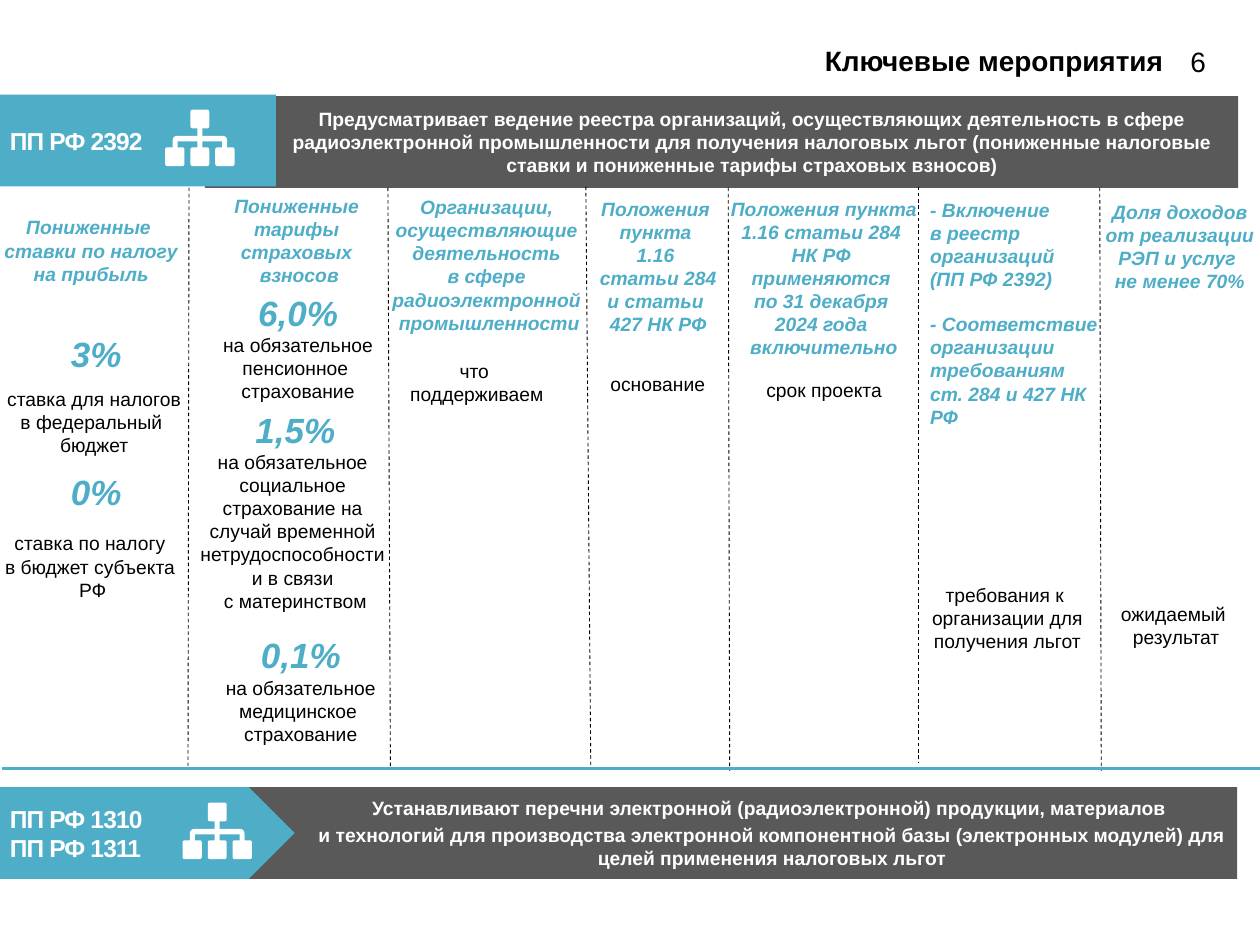
from dataclasses import dataclass
from typing import Any

from lxml import etree
from pptx import Presentation
from pptx import util as u
from pptx.dml import color
from pptx.enum import dml, shapes, text
from pptx.oxml import ns

LEFT, CENTER, RIGHT = text.PP_ALIGN.LEFT, text.PP_ALIGN.CENTER, text.PP_ALIGN.RIGHT


@dataclass(frozen=True)
class Theme:
    font: str = "Arial"
    accent: str = "4EADC7"
    grey: str = "595959"
    black: str = "000000"
    white: str = "FFFFFF"
    body: float = 11
    tag: float = 14
    heading: float = 16
    rate: float = 20


THEME = Theme()


@dataclass(frozen=True)
class Style:
    size: float
    color: str
    bold: bool = False
    italic: bool = False
    tracking: int = 0  # hundredths of a point


PLAIN = Style(THEME.body, THEME.black)
TOPIC = Style(THEME.body, THEME.accent, True, True)
RATE = Style(THEME.rate, THEME.accent, True, True)
BANNER = Style(THEME.body, THEME.white, True)
TAG = Style(THEME.tag, THEME.white, True, tracking=-50)
HEADING = Style(THEME.heading, THEME.black, True)
NUMBER = Style(THEME.heading, THEME.black)


@dataclass(frozen=True)
class Block:
    """A text box in centimetres; a line break in the words starts a new paragraph."""
    left: float
    top: float
    width: float
    height: float
    words: str
    style: Style = PLAIN
    align: Any = CENTER
    rate: str = ""
    gaps: tuple = ()  # (paragraph index, space before in points)
    insets: tuple = (0.13, 0.13)
    wrap: bool = True


@dataclass(frozen=True)
class Rule:
    x1: float
    y1: float
    x2: float
    y2: float


BLOCKS = [
    # Page header
    Block(11, 0.74, 12.7, 0.94, "Ключевые мероприятия", HEADING, RIGHT, insets=(0.25, 0.13)),
    Block(24, 0.89, 0.3, 0.69, "6", NUMBER, RIGHT, insets=(0, 0), wrap=False),
    # Profit tax
    Block(-0.08, 4.22, 3.84, 1.68, "Пониженные \nставки по налогу на прибыль", TOPIC),
    Block(1.3, 6.58, 1.3, 1.12, "3%", RATE, LEFT),
    Block(-0.13, 7.67, 4.06, 1.68, "ставка для налогов\nв федеральный \nбюджет"),
    Block(1.3, 9.35, 1.3, 1.12, "0%", RATE, LEFT),
    Block(-0.25, 10.59, 4.24, 1.68, "ставка по налогу \nв бюджет субъекта \nРФ"),
    # Insurance contributions
    Block(3.81, 3.78, 4.45, 2.13, "Пониженные \nтарифы \nстраховых \nвзносов", TOPIC),
    Block(4.32, 5.74, 3.38, 2.51, "на обязательное пенсионное \nстрахование", rate="6,0%"),
    Block(3.68, 8.1, 4.55, 4.39,
          "на обязательное \nсоциальное \nстрахование на \nслучай временной \n"
          "нетрудоспособности \nи в связи \nс материнством", rate="1,5%"),
    Block(4.34, 12.65, 3.45, 2.51, "на обязательное медицинское \nстрахование", rate="0,1%"),
    # Who is supported
    Block(7.77, 3.81, 4.19, 3.07,
          "Организации, \nосуществляющие \nдеятельность \nв сфере \n"
          "радиоэлектронной \nпромышленности", TOPIC),
    Block(7.34, 7.11, 4.55, 1.19, "что \nподдерживаем"),
    # Legal basis
    Block(11.91, 3.84, 2.72, 3.07,
          "Положения \nпункта \n1.16 \nстатьи 284 \nи статьи \n427 НК РФ", TOPIC),
    Block(11.48, 7.37, 3.56, 0.74, "основание"),
    # Term
    Block(14.5, 3.84, 4.22, 3.56,
          "Положения пункта 1.16 статьи 284 \nНК РФ \nприменяются \n"
          "по 31 декабря \n2024 года \nвключительно", TOPIC),
    Block(14.94, 7.49, 3.35, 0.74, "срок проекта"),
    # Requirements
    Block(18.62, 3.86, 3.68, 4.95,
          "- Включение\nв реестр\nорганизаций\n(ПП РФ 2392)\n"
          "- Соответствие организации\nтребованиям\nст. 284 и 427 НК РФ",
          TOPIC, LEFT, gaps=((4, 12.65),)),
    Block(18.57, 11.63, 3.48, 1.68, "требования к \nорганизации для получения льгот"),
    # Expected result
    Block(22.12, 3.91, 3.33, 2.13, "Доля доходов от реализации РЭП и услуг \nне менее 70%", TOPIC),
    Block(22.07, 12.01, 3.28, 1.19, "ожидаемый \nрезультат"),
]

DIVIDERS = [
    Rule(3.81, 3.78, 3.79, 15.49), Rule(7.82, 3.78, 7.87, 15.49),
    Rule(11.81, 3.76, 11.91, 15.52), Rule(14.68, 3.78, 14.71, 15.54),
    Rule(18.52, 3.76, 18.52, 15.39), Rule(22.17, 3.78, 22.2, 15.54),
]

BAR_HEIGHT = 1.85
# Right half of the hierarchy icon: x from its axis, y, corner radius
ICON_HALF = [
    (0.19, 0, 0.05), (0.19, 0.38, 0.05), (0.05, 0.38, 0), (0.05, 0.53, 0),
    (0.55, 0.53, 0.1), (0.55, 0.76, 0), (0.7, 0.76, 0.05), (0.7, 1.14, 0.05),
    (0.31, 1.14, 0.05), (0.31, 0.76, 0.05), (0.45, 0.76, 0), (0.45, 0.64, 0),
    (0.05, 0.64, 0), (0.05, 0.76, 0), (0.19, 0.76, 0.05), (0.19, 1.14, 0.05),
]


def rgb(value: str) -> color.RGBColor:
    return color.RGBColor.from_string(value)


def write(frame, lines: list, align, gaps: tuple = ()) -> None:
    """Fill a text frame with (words, style) paragraphs."""
    for index, (words, style) in enumerate(lines):
        para = frame.paragraphs[0] if index == 0 else frame.add_paragraph()
        para.alignment = align
        if index in dict(gaps):
            para.space_before = u.Pt(dict(gaps)[index])
        span = para.add_run()
        span.text = words
        formats = {"name": THEME.font, "size": u.Pt(style.size),
                   "bold": style.bold, "italic": style.italic}
        for name, value in formats.items():
            setattr(span.font, name, value)
        span.font.color.rgb = rgb(style.color)
        if style.tracking:
            span.font._element.set("spc", str(style.tracking))


def set_frame(frame, across: float, down: float, **formats) -> None:
    insets = {"margin_left": u.Cm(across), "margin_right": u.Cm(across),
              "margin_top": u.Cm(down), "margin_bottom": u.Cm(down)}
    for name, value in (insets | formats).items():
        setattr(frame, name, value)


def paint(shape, fill: str) -> None:
    shape.fill.solid()
    shape.fill.fore_color.rgb = rgb(fill)
    shape.line.fill.background()


def add_block(page, block: Block) -> None:
    box = page.shapes.add_textbox(*map(u.Cm, (block.left, block.top, block.width, block.height)))
    set_frame(box.text_frame, *block.insets, word_wrap=block.wrap,
              auto_size=text.MSO_AUTO_SIZE.SHAPE_TO_FIT_TEXT)
    lines = [(block.rate, RATE)] if block.rate else []
    lines += [(words, block.style) for words in block.words.split("\n")]
    write(box.text_frame, lines, block.align, block.gaps)


def add_bar(page, kind, left: float, top: float, width: float, fill: str, words: str,
            style: Style, align, indent: float = 0, gaps: tuple = ()) -> None:
    bar = page.shapes.add_shape(kind, *map(u.Cm, (left, top, width, BAR_HEIGHT)))
    bar.shadow.inherit = False
    paint(bar, fill)
    set_frame(bar.text_frame, 0.2, 0.2, margin_left=u.Cm(0.2 + indent), word_wrap=True,
              vertical_anchor=text.MSO_ANCHOR.MIDDLE)
    write(bar.text_frame, [(line, style) for line in words.split("\n")], align, gaps)


def add_rule(page, rule: Rule, stroke: str, width: float, dash=None) -> None:
    line = page.shapes.add_connector(shapes.MSO_CONNECTOR.STRAIGHT,
                                     *map(u.Cm, (rule.x1, rule.y1, rule.x2, rule.y2)))
    line.line.color.rgb = rgb(stroke)
    line.line.width = u.Pt(width)
    if dash:
        line.line.dash_style = dash
    etree.SubElement(line._element.spPr, ns.qn("a:effectLst"))


def add_icon(page, axis: float, top: float) -> None:
    corners = ICON_HALF + [(-x, y, r) for x, y, r in reversed(ICON_HALF)]
    points = []
    for index, (x, y, radius) in enumerate(corners):
        ends = []
        for other in (corners[index - 1], corners[(index + 1) % len(corners)]):
            dx, dy = other[0] - x, other[1] - y
            reach = radius / (abs(dx) + abs(dy))  # all sides are upright or level
            ends.append((x + dx * reach, y + dy * reach))
        (ax, ay), (bx, by) = ends
        for t in (0, 0.25, 0.5, 0.75, 1) if radius else (0,):
            a, m, b = (1 - t) ** 2, 2 * t * (1 - t), t * t
            points.append((u.Cm(axis + a * ax + m * x + b * bx),
                           u.Cm(top + a * ay + m * y + b * by)))
    builder = page.shapes.build_freeform(*points[0])
    builder.add_line_segments(points[1:], close=True)
    icon = builder.convert_to_shape()
    icon.shadow.inherit = False
    paint(icon, THEME.white)


def place_title(page) -> None:
    title = page.shapes.title
    title.left, title.top, title.width, title.height = map(u.Cm, (0, 1.91, 5.56, BAR_HEIGHT))
    paint(title, THEME.accent)
    set_frame(title.text_frame, 0.2, 0.2, word_wrap=True, auto_size=text.MSO_AUTO_SIZE.NONE,
              vertical_anchor=text.MSO_ANCHOR.MIDDLE)
    write(title.text_frame, [("ПП РФ 2392", TAG)], LEFT)
    page.shapes._spTree.append(title._element)  # in front of the grey bar


def main() -> None:
    deck = Presentation()
    deck.slide_width, deck.slide_height = u.Cm(25.4), u.Cm(19.05)
    page = deck.slides.add_slide(deck.slide_layouts[5])
    box_kind, arrow_kind = shapes.MSO_SHAPE.RECTANGLE, shapes.MSO_SHAPE.PENTAGON

    # Upper band
    add_bar(page, box_kind, 4.13, 1.94, 20.83, THEME.grey,
            "Предусматривает ведение реестра организаций, осуществляющих деятельность в сфере "
            "радиоэлектронной промышленности для получения налоговых льгот (пониженные налоговые "
            "ставки и пониженные тарифы страховых взносов)", BANNER, CENTER, 1.24)
    place_title(page)
    add_icon(page, 4.03, 2.21)

    # Columns
    for block in BLOCKS:
        add_block(page, block)
    for divider in DIVIDERS:
        add_rule(page, divider, THEME.black, 0.5, dml.MSO_LINE.DASH)
    add_rule(page, Rule(0.05, 15.49, 25.45, 15.49), THEME.accent, 2)

    # Lower band
    add_bar(page, box_kind, 4.95, 15.87, 19.99, THEME.grey,
            "Устанавливают перечни электронной (радиоэлектронной) продукции, материалов \n"
            "и технологий для производства электронной компонентной базы (электронных модулей) "
            "для целей применения налоговых льгот", BANNER, CENTER, 1.24, ((1, 2.2),))
    add_bar(page, arrow_kind, 0, 15.87, 5.94, THEME.accent,
            "ПП РФ 1310\nПП РФ 1311", TAG, LEFT)
    add_icon(page, 4.38, 16.18)
    deck.save("out.pptx")


if __name__ == "__main__":
    main()
